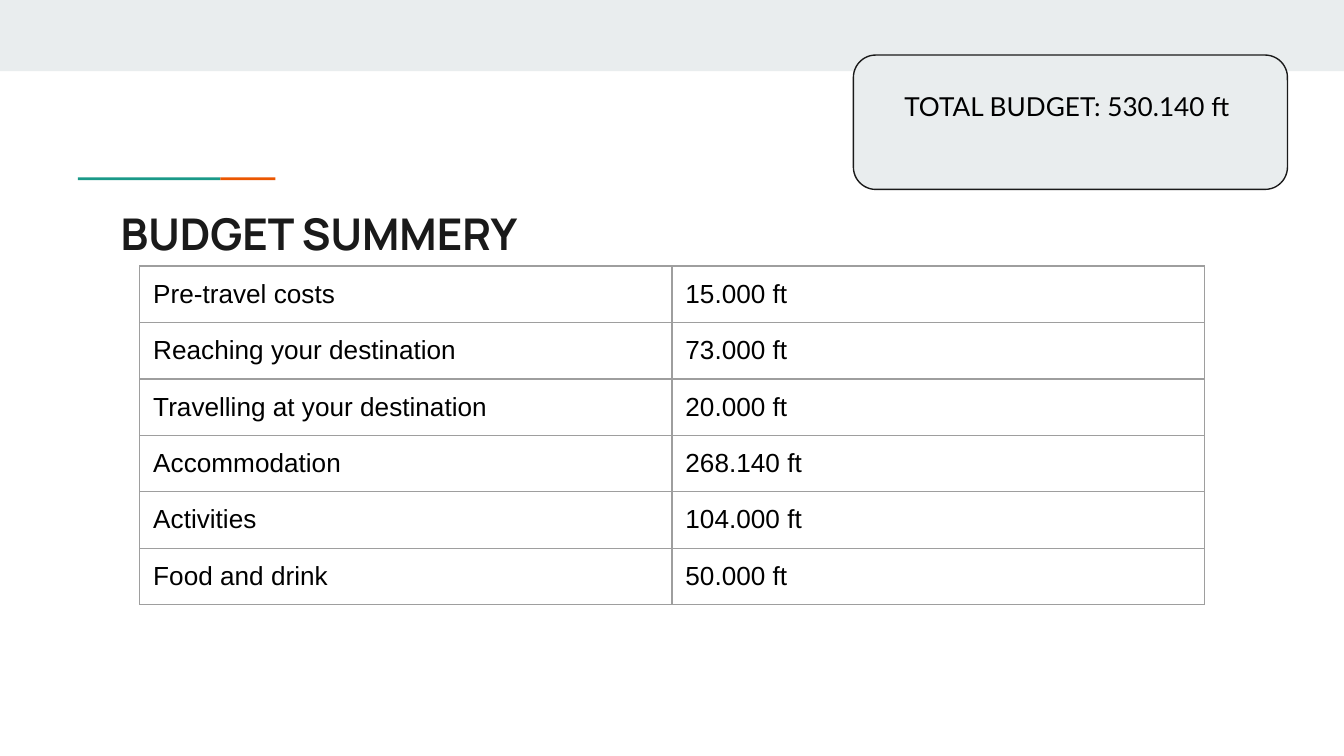
import pptx
import pptx.util
import pptx.dml.color
import pptx.enum.shapes
import pptx.enum.text
import pptx.oxml
import pptx.oxml.ns

# Content
TITLE = "BUDGET SUMMERY"
TOTAL = "TOTAL BUDGET: 530.140 ft"
COSTS = [
    ("Pre-travel costs", "15.000 ft"),
    ("Reaching your destination", "73.000 ft"),
    ("Travelling at your destination", "20.000 ft"),
    ("Accommodation", "268.140 ft"),
    ("Activities", "104.000 ft"),
    ("Food and drink", "50.000 ft"),
]
COLORS = {"band": "E9EDEE", "teal": "1A9988", "orange": "EB5600",
          "dark": "1A1A1A", "text": "000000", "grid": "9E9E9E"}

# Layout, in inches, on a 16:9 slide
WIDTH = 10
HEIGHT = WIDTH * 9 / 16
INSET = 0.1
TABLE_LEFT, TABLE_TOP, COL_W, ROW_H = 1.04, 1.98, 3.96, 0.42
RULE_LEFT, RULE_TOP, RULE_H = 0.58, 1.32, 0.02
RULE_PARTS = [("teal", 1.06), ("orange", 0.41)]

Inches, Pt = pptx.util.Inches, pptx.util.Pt
SHAPES = pptx.enum.shapes.MSO_SHAPE


def rgb(name):
    return pptx.dml.color.RGBColor.from_string(COLORS[name])


def add_box(s, kind, x, y, w, h, fill, line=None):
    sp = s.shapes.add_shape(kind, Inches(x), Inches(y), Inches(w), Inches(h))
    sp.shadow.inherit = False
    sp.fill.solid()
    sp.fill.fore_color.rgb = rgb(fill)
    if line:
        sp.line.color.rgb = rgb(line)
        sp.line.width = Pt(0.75)
    else:
        sp.line.fill.background()
    return sp


def set_insets(obj, right=INSET, bottom=INSET):
    obj.margin_left = obj.margin_top = Inches(INSET)
    obj.margin_right, obj.margin_bottom = Inches(right), Inches(bottom)


def add_run(tf, text, size, font, color, bold=False):
    p = tf.paragraphs[0]
    r = p.add_run()
    r.text = text
    r.font.size, r.font.name, r.font.bold = Pt(size), font, bold
    r.font.color.rgb = rgb(color)
    return p


def set_borders(cell):
    pr = cell._tc.get_or_add_tcPr()
    for i, side in enumerate(("lnL", "lnR", "lnT", "lnB")):
        pr.insert(i, pptx.oxml.parse_xml(
            f'<a:{side} {pptx.oxml.ns.nsdecls("a")} w="{Pt(0.75)}"><a:solidFill>'
            f'<a:srgbClr val="{COLORS["grid"]}"/></a:solidFill></a:{side}>'))


prs = pptx.Presentation()
prs.slide_width, prs.slide_height = Inches(WIDTH), Inches(HEIGHT)
s = prs.slides.add_slide(prs.slide_layouts[6])

# Top band and two-colour rule
add_box(s, SHAPES.RECTANGLE, 0, 0, WIDTH, 0.53, "band")
x = RULE_LEFT
for color, w in RULE_PARTS:
    add_box(s, SHAPES.RECTANGLE, x, RULE_TOP, w, RULE_H, color)
    x += w

# Title
tf = s.shapes.add_textbox(Inches(0.8), Inches(1.44), Inches(8.41), Inches(0.59)).text_frame
tf.word_wrap = True
set_insets(tf)
add_run(tf, TITLE, 23.4, "Manrope", "dark", bold=True)

# Cost table: the bottom inset leaves each text line room within its row
table = s.shapes.add_table(len(COSTS), 2, Inches(TABLE_LEFT), Inches(TABLE_TOP),
                           Inches(2 * COL_W), Inches(len(COSTS) * ROW_H)).table
table.first_row = table.horz_banding = False
for col in table.columns:
    col.width = Inches(COL_W)
for i, cost in enumerate(COSTS):
    table.rows[i].height = Inches(ROW_H)
    for j, text in enumerate(cost):
        cell = table.cell(i, j)
        cell.fill.background()
        set_insets(cell, bottom=0.08)
        set_borders(cell)
        add_run(cell.text_frame, text, 14, "Arial", "text")

# Total box: the deeper bottom inset lifts the text above the middle
sp = add_box(s, SHAPES.FLOWCHART_ALTERNATE_PROCESS, 6.35, 0.41, 3.23, 1, "band", "dark")
tf = sp.text_frame
tf.word_wrap = True
tf.vertical_anchor = pptx.enum.text.MSO_ANCHOR.MIDDLE
set_insets(tf, right=0.15, bottom=0.34)
p = add_run(tf, TOTAL, 14, "Lato", "text")
p.alignment = pptx.enum.text.PP_ALIGN.CENTER

prs.save("out.pptx")
